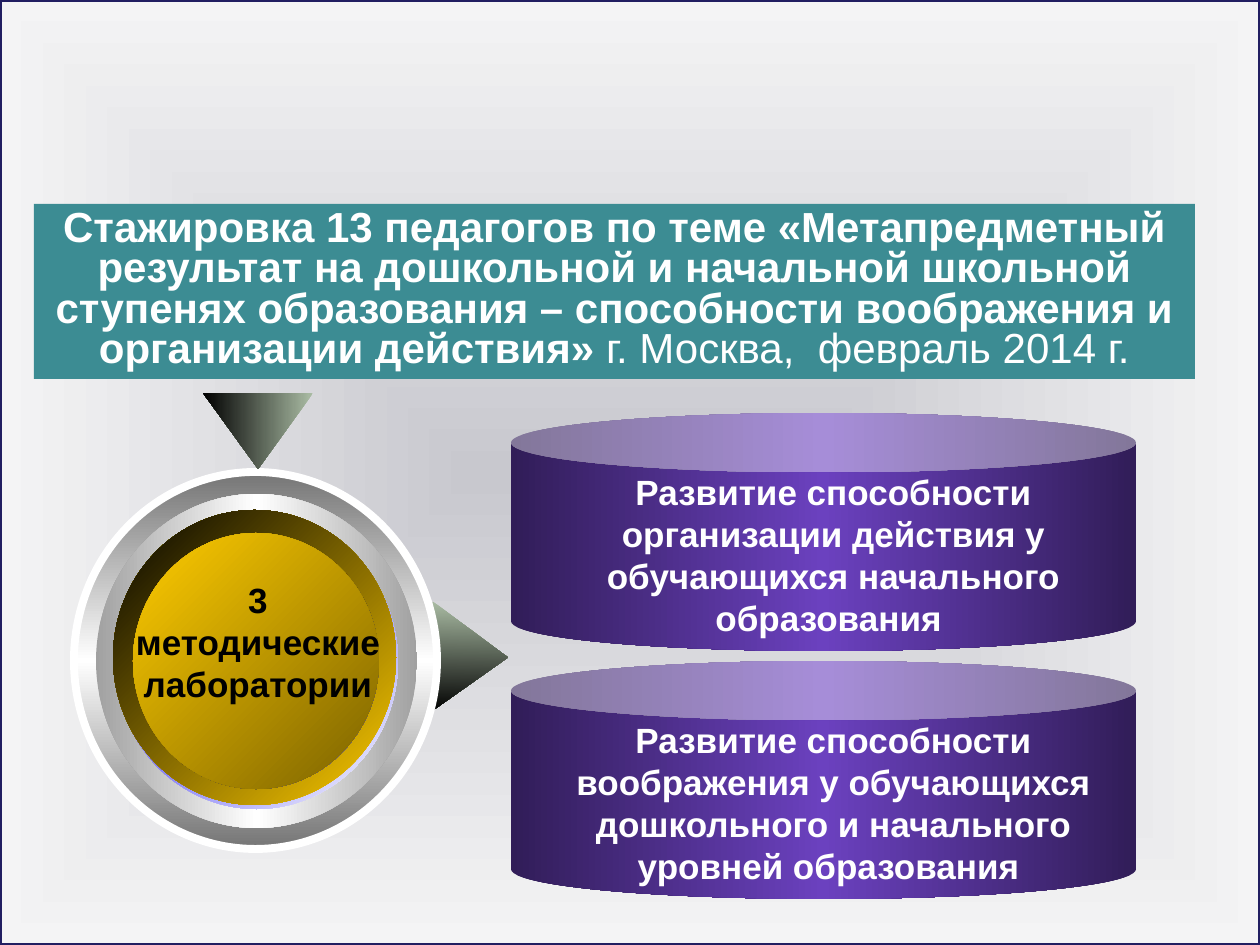
from lxml import etree
from pptx import Presentation
from pptx.dml.color import RGBColor
from pptx.enum.shapes import MSO_SHAPE
from pptx.enum.text import MSO_ANCHOR, PP_ALIGN
from pptx.oxml.ns import qn
from pptx.util import Emu, Pt

RECT, CAN, OVAL, ARROW = (MSO_SHAPE.RECTANGLE, MSO_SHAPE.CAN,
                          MSO_SHAPE.OVAL, MSO_SHAPE.UP_ARROW)
TOP, MIDDLE, CENTER = MSO_ANCHOR.TOP, MSO_ANCHOR.MIDDLE, PP_ALIGN.CENTER
SCALE = 914400 / 126  # EMU per px
WIDE, HIGH = 1260, 945

COLORS = {
    "white": "FFFFFF", "black": "000000", "navy": "211E61", "teal": "3C8C93",
    "fog": "C8C8CE", "pale": "F4F4F5", "sage": "ABBDA5",
    "plum": "311D58", "violet": "6B41BF", "gray": "757575", "steel": "A1A1A1",
    "pearl": "FEFEFE", "lilac": "837DF7", "gold": "FFCC00",
    "indigo": "464385", "bronze": "7B6200",
}

# Content: each text is a list of paragraphs, each a list of (words, bold) runs
BANNER = [[
    ("Стажировка 13 педагогов по теме «Метапредметный результат на дошкольной "
     "и начальной школьной ступенях образования – способности воображения "
     "и организации действия» ", True),
    ("г. Москва,  февраль 2014 г.", False),
]]
HUB = [[("3", True)], [("методические лаборатории", True)]]
GOALS = [
    "Развитие способности организации действия у обучающихся "
    "начального образования ",
    "Развитие способности воображения у обучающихся дошкольного "
    "и начального уровней образования ",
]

# Disc rings from back to front: box, gradient colours, angle
RINGS = [
    ((74, 472, 363, 377), ("gray", "white", "gray"), 90),
    ((96, 494, 321, 334), ("steel", "white", "steel"), 180),
    ((115, 514, 283, 295), ("pearl", "lilac", "pearl"), 225),
    ((113, 510, 283, 295), ("gold", "black"), 225),
    ((133, 533, 246, 256), ("indigo", "lilac", "indigo"), 135),
    ((133, 533, 246, 256), ("bronze", "gold"), 225),
]
ARROW_SIZE = (110, 76)
SIDE_ARROW = (415, 619, 90.7)  # left, top, turn
DOWN_ARROW = (203, 393, 180)


def px(n):
    return Emu(round(n * SCALE))


def rgb(name):
    return RGBColor.from_string(COLORS[name])


def blend(shape, names, angle=None):
    """Even gradient: linear at an angle, or from the centre without one."""
    shape.fill.gradient()
    grad = shape._element.spPr.find(qn("a:gradFill"))
    for old in list(grad):
        grad.remove(old)
    stops = etree.SubElement(grad, qn("a:gsLst"))
    for i, name in enumerate(names):
        pos = str(100000 * i // (len(names) - 1))
        stop = etree.SubElement(stops, qn("a:gs"), pos=pos)
        etree.SubElement(stop, qn("a:srgbClr"), val=COLORS[name])
    if angle is None:
        path = etree.SubElement(grad, qn("a:path"), path="shape")
        sides = dict.fromkeys("ltrb", "50000")
        etree.SubElement(path, qn("a:fillToRect"), **sides)
    else:
        etree.SubElement(grad, qn("a:lin"), ang=str(angle * 60000), scaled="1")


def draw(slide, kind, box):
    shape = slide.shapes.add_shape(kind, *map(px, box))
    shape.shadow.inherit = False
    shape.line.fill.background()
    return shape


def edge(shape, name, width):
    shape.line.color.rgb = rgb(name)
    shape.line.width = Pt(width)


def write(shape, paras, size, color, anchor=TOP, space=None):
    frame = shape.text_frame
    frame.word_wrap = True
    frame.vertical_anchor = anchor
    for i, runs in enumerate(paras):
        para = frame.add_paragraph() if i else frame.paragraphs[0]
        para.alignment = CENTER
        para.line_spacing = space
        para.font.name = "Arial"
        para.font.size = Pt(size)
        para.font.color.rgb = rgb(color)
        for words, bold in runs:
            run = para.add_run()
            run.text = words
            run.font.bold = bold


def arrow(slide, left, top, turn):
    shape = draw(slide, ARROW, (left, top, *ARROW_SIZE))
    shape.adjustments[0], shape.adjustments[1] = 0.517, 1
    shape.rotation = turn
    shape._element.spPr.find(qn("a:xfrm")).set("flipH", "1")
    blend(shape, ("sage", "black"), 180)


def main():
    prs = Presentation()
    prs.slide_width, prs.slide_height = px(WIDE), px(HIGH)
    slide = prs.slides.add_slide(prs.slide_layouts[6])

    # Backdrop
    back = draw(slide, RECT, (0, 0, WIDE, HIGH))
    blend(back, ("fog", "pale"))
    edge(back, "navy", 2.25)

    arrow(slide, *SIDE_ARROW)

    # Goals
    for i, goal in enumerate(GOALS):
        top = 413 + 248 * i
        can = draw(slide, CAN, (511, top, 625, 238))
        can.adjustments[0] = 0.25
        blend(can, ("plum", "violet", "plum"), 180)
        label = slide.shapes.add_textbox(*map(px, (511, top + 72, 645, 139)))
        write(label, [[(goal, True)]], 20, "white", MIDDLE)

    # Disc
    for i, (box, names, angle) in enumerate(RINGS):
        ring = draw(slide, OVAL, box)
        blend(ring, names, angle)
        if i == 0:
            edge(ring, "white", 4.5)
    label = slide.shapes.add_textbox(*map(px, (99, 572, 318, 139)))
    write(label, HUB, 20, "black")

    arrow(slide, *DOWN_ARROW)

    # Banner
    banner = draw(slide, RECT, (34, 204, 1161, 175))
    banner.fill.solid()
    banner.fill.fore_color.rgb = rgb("teal")
    write(banner, BANNER, 24, "white", space=0.8)

    prs.save("out.pptx")


if __name__ == "__main__":
    main()
